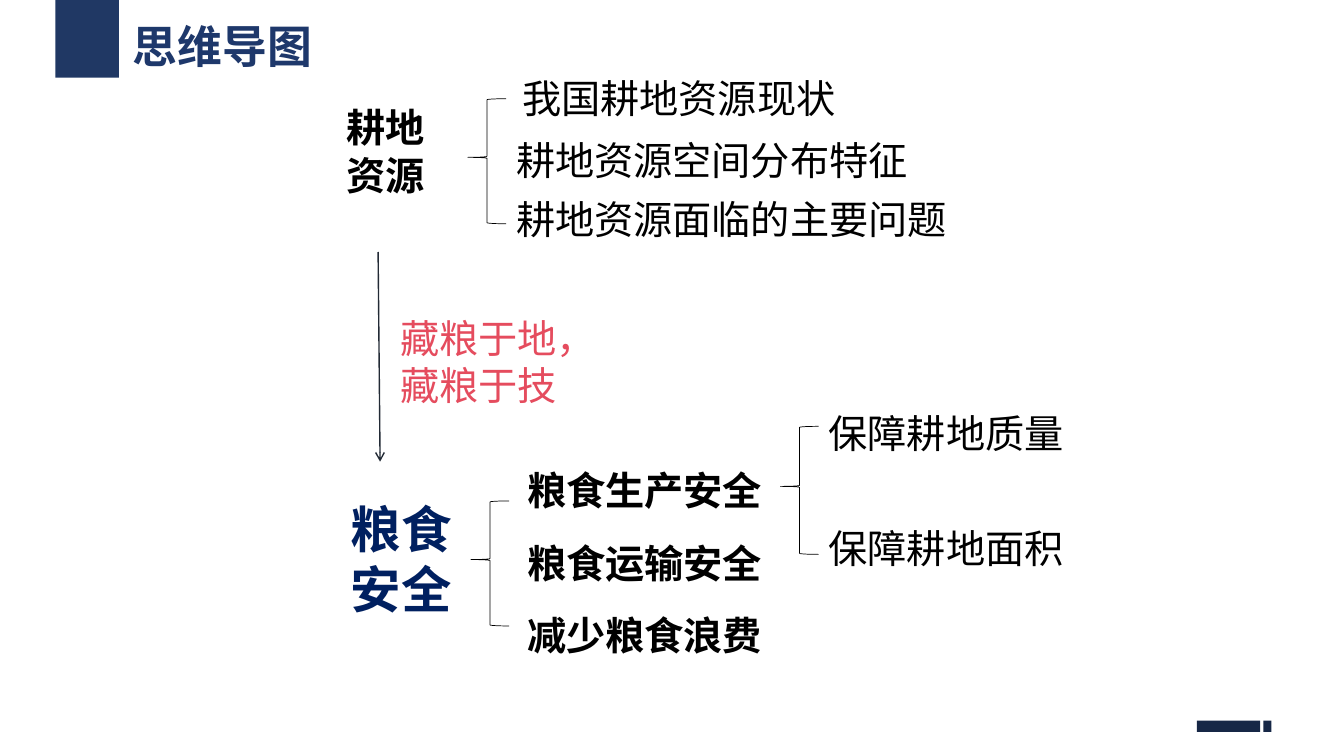
from pptx import Presentation
from pptx import util as u
from pptx.dml.color import RGBColor
from pptx.enum import shapes, text
from pptx.oxml.ns import qn
from lxml import etree

CJK_FONT = "Noto Sans CJK SC"
BLACK = "000000"
NAVY = "162746"


def rgb(value):
    return RGBColor.from_string(value)


def box(left, top, width, height):
    return [u.Inches(v) for v in (left, top, width, height)]


def add_block(slide, bounds, color):
    block = slide.shapes.add_shape(shapes.MSO_SHAPE.RECTANGLE, *box(*bounds))
    block.shadow.inherit = False
    block.fill.solid()
    block.fill.fore_color.rgb = rgb(color)
    block.line.fill.background()


def add_label(slide, wording, bounds, wrap=False, color=BLACK, **font_format):
    label = slide.shapes.add_textbox(*box(*bounds))
    frame = label.text_frame
    frame.word_wrap = wrap
    run = frame.paragraphs[0].add_run()
    run.text = wording
    values = {"size": u.Pt(28), "name": "Arial", "bold": False, **font_format}
    for name, value in values.items():
        setattr(run.font, name, value)
    run.font.color.rgb = rgb(color)
    east_asian = etree.Element(qn("a:ea"), typeface=CJK_FONT)
    run.font._element.find(qn("a:latin")).addnext(east_asian)
    return frame


def add_brace(slide, left, top, height):
    brace = slide.shapes.add_shape(
        shapes.MSO_SHAPE.LEFT_BRACE, *box(left, top, 0.38, height))
    brace.shadow.inherit = False
    brace.adjustments[0] = 0.026
    brace.adjustments[1] = 0.469
    brace.fill.background()
    brace.line.color.rgb = rgb(BLACK)
    brace.line.width = u.Pt(0.5)


def add_arrow(slide, start, end, color):
    arrow = slide.shapes.add_connector(
        shapes.MSO_CONNECTOR.STRAIGHT, *box(*start, *end))
    arrow.line.color.rgb = rgb(color)
    arrow.line.width = u.Pt(1)
    etree.SubElement(arrow.line._get_or_add_ln(), qn("a:tailEnd"), type="arrow")
    etree.SubElement(arrow._element.spPr, qn("a:effectLst"))


def add_title(slide):
    add_block(slide, (0.55, 0, 0.63, 0.77), "203864")
    add_label(slide, "思维导图", (1.22, 0.14, 1.98, 0.64), color="1E386B",
              size=u.Pt(32), name=CJK_FONT, bold=True)


def add_farmland(slide):
    add_label(slide, "耕地资源", (3.34, 0.98, 1.29, 1.39), wrap=True, bold=True)
    add_brace(slide, 4.64, 0.98, 1.24)
    topics = [
        ("我国耕地资源现状", 5.08, 0.69, 3.31),
        ("耕地资源空间分布特征", 5.02, 1.3, 4.09),
        ("耕地资源面临的主要问题", 5.02, 1.89, 4.48),
    ]
    for wording, left, top, width in topics:
        add_label(slide, wording, (left, top, width, 0.57))


def add_strategy(slide):
    add_arrow(slide, (3.75, 2.5), (3.77, 4.58), "222A35")
    add_label(slide, "藏粮于地，藏粮于技", (3.87, 3.07, 1.98, 1.04),
              wrap=True, color="E54C5E")


def add_food_security(slide):
    add_label(slide, "粮食安全", (3.38, 4.89, 1.38, 1.31), wrap=True,
              color="002060", size=u.Pt(36), bold=True)
    add_brace(slide, 4.67, 4.97, 1.24)
    for row, aspect in enumerate(["粮食生产安全", "粮食运输安全", "减少粮食浪费"]):
        add_label(slide, aspect, (5.13, 4.58 + 0.72 * row, 2.53, 0.57), bold=True)
    add_brace(slide, 7.74, 4.23, 1.27)
    for row, measure in enumerate(["保障耕地质量", "保障耕地面积"]):
        add_label(slide, measure, (8.12, 4.01 + 1.14 * row, 2.85, 0.57), wrap=True)


def main():
    deck = Presentation()
    deck.slide_width, deck.slide_height = u.Inches(13.33), u.Inches(7.5)
    slide = deck.slides.add_slide(deck.slide_layouts[6])
    add_title(slide)
    for left, width in [(11.87, 0.63), (12.53, 0.08)]:
        add_block(slide, (left, 7.15, width, 0.11), NAVY)
    add_farmland(slide)
    add_strategy(slide)
    add_food_security(slide)
    deck.save("out.pptx")


if __name__ == "__main__":
    main()
